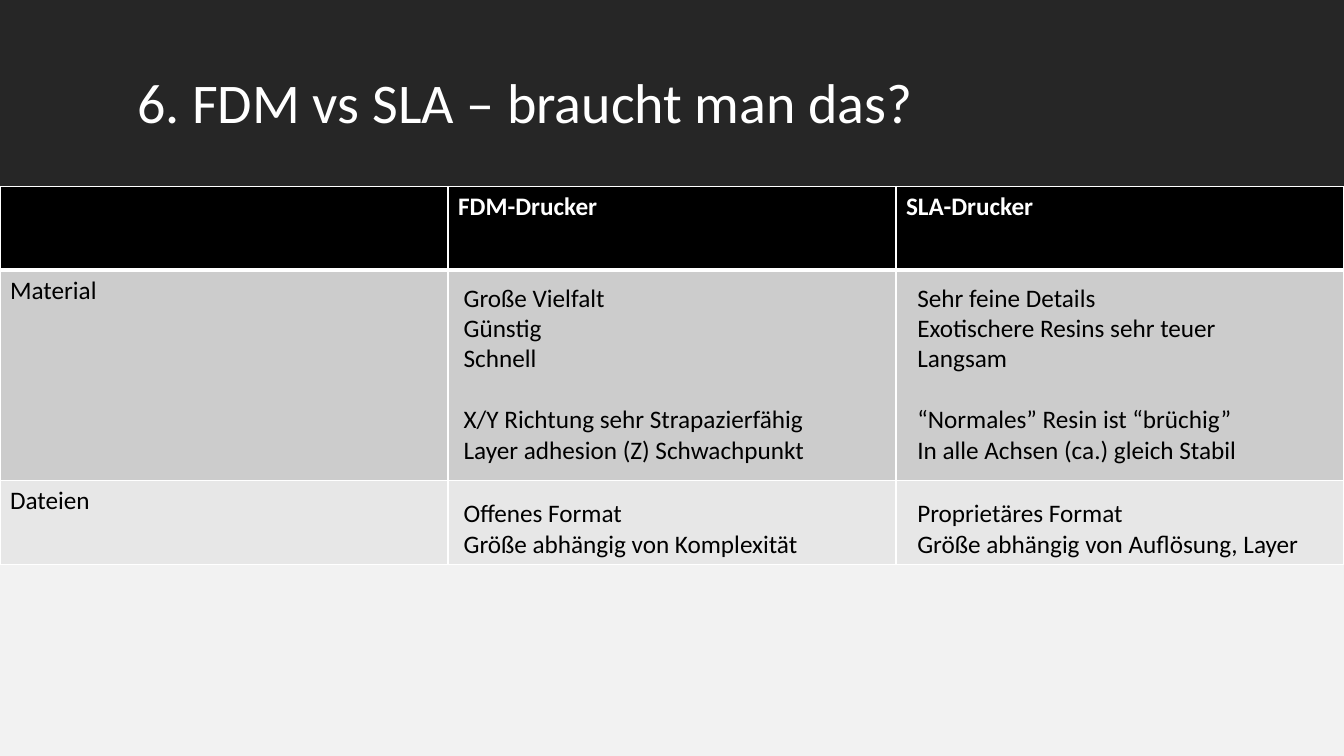
from dataclasses import dataclass

from lxml import etree
from pptx import Presentation
from pptx.dml.color import RGBColor
from pptx.enum import shapes, text
from pptx.oxml import ns
from pptx.slide import Slide
from pptx.table import _Cell
from pptx.text.text import _Paragraph
from pptx.util import Inches, Pt


@dataclass(frozen=True)
class Theme:
    font: str = "Calibri"
    title_size: int = 40
    text_size: int = 18
    dark: str = "262626"
    light: str = "F2F2F2"
    white: str = "FFFFFF"
    black: str = "000000"
    row_fills: tuple[str, ...] = ("000000", "CCCCCC", "E7E7E7")
    thin_line: float = 0.96
    header_line: float = 3


@dataclass(frozen=True)
class Band:
    top: float
    height: float
    color: str


@dataclass(frozen=True)
class Comparison:
    """Facts on one printer type; each group after the first starts after a gap."""
    left: float
    width: float
    groups: tuple[tuple[str, ...], ...]


THEME = Theme()
SLIDE_WIDTH = 13.33
TABLE_TOP = 1.85
GROUP_GAPS = (0, 22, 24)  # points before the first line of each group

BANDS = (
    Band(-0.01, 1.86, THEME.dark),
    Band(TABLE_TOP, 5.65, THEME.light),
)
ROW_HEIGHTS = (0.83, 2.09, 0.83)
TABLE_TEXT = (
    ("", "FDM-Drucker", "SLA-Drucker"),
    ("Material", "", ""),
    ("Dateien", "", ""),
)
COMPARISONS = (
    Comparison(4.5, 4.25, (
        ("Große Vielfalt", "Günstig", "Schnell"),
        ("X/Y Richtung sehr Strapazierfähig", "Layer adhesion (Z) Schwachpunkt"),
        ("Offenes Format", "Größe abhängig von Komplexität"),
    )),
    Comparison(9, 4, (
        ("Sehr feine Details", "Exotischere Resins sehr teuer", "Langsam"),
        ("“Normales” Resin ist “brüchig”", "In alle Achsen (ca.) gleich Stabil"),
        ("Proprietäres Format", "Größe abhängig von Auflösung, Layer"),
    )),
)


def format_runs(paragraph: _Paragraph, size: int, color: str, bold: bool = False) -> None:
    for run in paragraph.runs:
        run.font.name = THEME.font
        run.font.size = Pt(size)
        run.font.bold = bold
        run.font.color.rgb = RGBColor.from_string(color)


def add_band(slide: Slide, band: Band) -> None:
    rectangle = slide.shapes.add_shape(
        shapes.MSO_SHAPE.RECTANGLE, 0, Inches(band.top),
        Inches(SLIDE_WIDTH), Inches(band.height))
    rectangle.shadow.inherit = False
    rectangle.fill.solid()
    rectangle.fill.fore_color.rgb = RGBColor.from_string(band.color)
    rectangle.line.fill.background()


def add_title(slide: Slide, wording: str) -> None:
    """Fill the title placeholder and bring it in front of the bands."""
    title = slide.shapes.title
    title.left, title.top = Inches(1.26), Inches(0.7)
    title.width, title.height = Inches(10.81), Inches(0.98)
    frame = title.text_frame
    frame.text = wording
    frame.vertical_anchor = text.MSO_ANCHOR.TOP
    heading = frame.paragraphs[0]
    heading.alignment = text.PP_ALIGN.LEFT
    heading.line_spacing = 0.9
    format_runs(heading, THEME.title_size, THEME.white)
    slide.shapes._spTree.append(title._element)


def set_borders(cell: _Cell, widths: dict[str, float]) -> None:
    properties = cell._tc.get_or_add_tcPr()
    for index, (side, width) in enumerate(widths.items()):
        line = etree.Element(ns.qn(f"a:ln{side}"), w=str(Pt(width)))
        fill = etree.SubElement(line, ns.qn("a:solidFill"))
        etree.SubElement(fill, ns.qn("a:srgbClr"), val=THEME.white)
        properties.insert(index, line)


def add_comparison_table(slide: Slide) -> None:
    columns = len(TABLE_TEXT[0])
    table = slide.shapes.add_table(
        len(TABLE_TEXT), columns, 0, Inches(TABLE_TOP),
        Inches(SLIDE_WIDTH), Inches(sum(ROW_HEIGHTS))).table
    for column in table.columns:
        column.width = Inches(SLIDE_WIDTH / columns)
    for row_index, wordings in enumerate(TABLE_TEXT):
        table.rows[row_index].height = Inches(ROW_HEIGHTS[row_index])
        is_header = row_index == 0
        color = THEME.white if is_header else THEME.black
        widths = dict.fromkeys("LRTB", THEME.thin_line)
        if is_header:
            widths["B"] = THEME.header_line
        elif row_index == 1:
            widths["T"] = THEME.header_line
        for column_index, wording in enumerate(wordings):
            cell = table.cell(row_index, column_index)
            cell.text_frame.text = wording
            format_runs(cell.text_frame.paragraphs[0], THEME.text_size, color, is_header)
            cell.fill.solid()
            cell.fill.fore_color.rgb = RGBColor.from_string(THEME.row_fills[row_index])
            set_borders(cell, widths)


def add_comparison(slide: Slide, comparison: Comparison) -> None:
    frame = slide.shapes.add_textbox(
        Inches(comparison.left), Inches(2.75),
        Inches(comparison.width), Inches(2.88)).text_frame
    frame.word_wrap = True
    frame.text = "\n".join(fact for group in comparison.groups for fact in group)
    paragraphs = iter(frame.paragraphs)
    for group, gap in zip(comparison.groups, GROUP_GAPS):
        for position in range(len(group)):
            paragraph = next(paragraphs)
            paragraph.space_before = Pt(0 if position else gap)
            format_runs(paragraph, THEME.text_size, THEME.black)


def main() -> None:
    presentation = Presentation()
    presentation.slide_width = Inches(SLIDE_WIDTH)
    presentation.slide_height = Inches(7.5)
    slide = presentation.slides.add_slide(presentation.slide_layouts[5])
    for band in BANDS:
        add_band(slide, band)
    add_title(slide, "6. FDM vs SLA – braucht man das?")
    add_comparison_table(slide)
    for comparison in COMPARISONS:
        add_comparison(slide, comparison)
    presentation.save("out.pptx")


if __name__ == "__main__":
    main()
